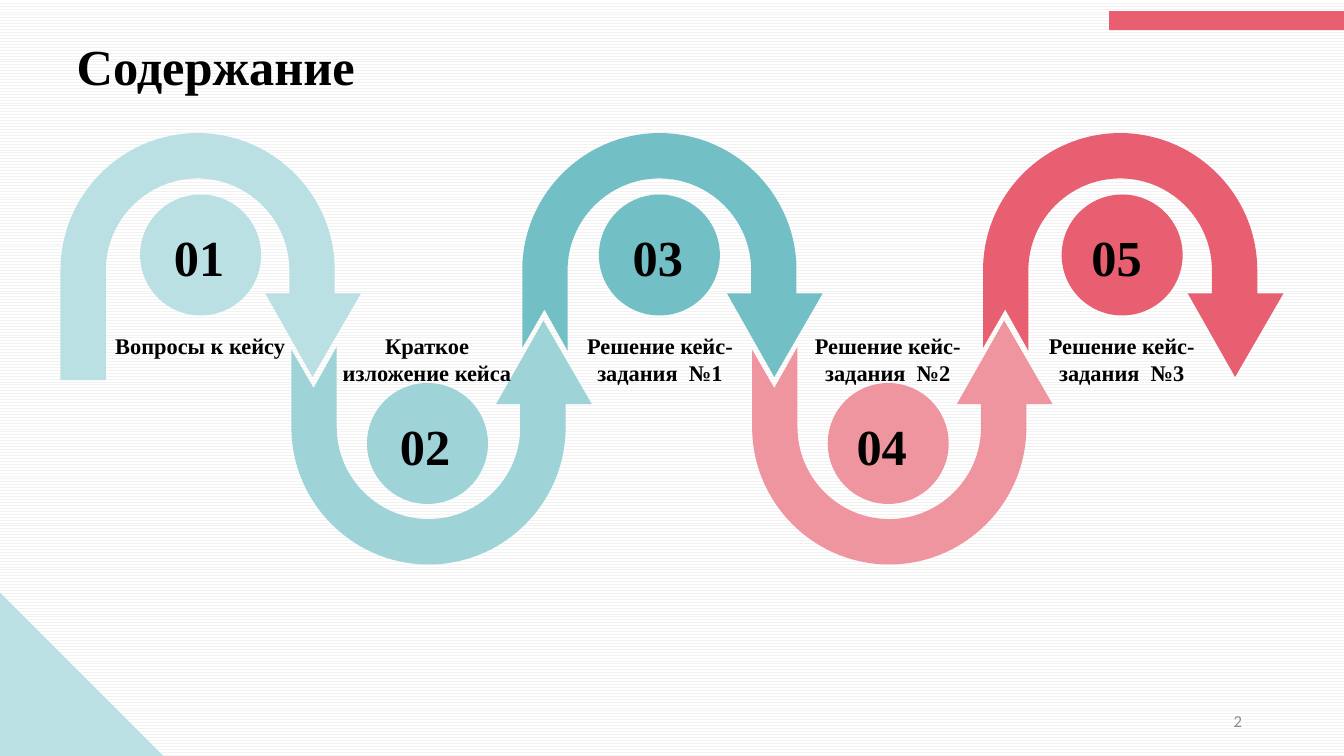
import pptx
import pptx.util
import pptx.dml.color
import pptx.enum.dml
import pptx.enum.shapes
import pptx.enum.text
import pptx.oxml
import pptx.oxml.ns

EMU = 9144  # one px is 0.01 inch
SHAPE = pptx.enum.shapes.MSO_SHAPE
ALIGN = pptx.enum.text.PP_ALIGN
ANCHOR = pptx.enum.text.MSO_ANCHOR
SERIF = "Times New Roman"
HEX = {
    "pale": "BBE0E3", "mint": "9ED3D7", "teal": "72BFC5",
    "pink": "EF95A0", "rose": "E75F71",
    "black": "000000", "gray": "8C8C8C", "line": "F2F2F2", "white": "FFFFFF",
}
COLOR = {name: pptx.dml.color.RGBColor.from_string(code) for name, code in HEX.items()}


def paint(shape, color):
    shape.shadow.inherit = False
    shape.fill.solid()
    shape.fill.fore_color.rgb = COLOR[color]
    shape.line.fill.background()


def write(shape, box, text, size, align=ALIGN.CENTER, font=SERIF, color="black",
          bold=True, anchor=ANCHOR.TOP):
    """Place a text shape in its px box, without margins, and fill in one paragraph."""
    shape.left, shape.top, shape.width, shape.height = [n * EMU for n in box]
    frame = shape.text_frame
    frame.word_wrap = True
    frame.auto_size = pptx.enum.text.MSO_AUTO_SIZE.NONE
    frame.vertical_anchor = anchor
    frame.margin_left = frame.margin_right = frame.margin_top = frame.margin_bottom = 0
    frame.text = text
    par = frame.paragraphs[0]
    par.alignment = align
    par.line_spacing = 1.0
    par.space_before = pptx.util.Pt(0)
    par.font.name = font
    par.font.size = pptx.util.Pt(size)
    par.font.bold = bold
    par.font.color.rgb = COLOR[color]


deck = pptx.Presentation()
deck.slide_width, deck.slide_height = 1333 * EMU, 750 * EMU
slide = deck.slides.add_slide(deck.slide_layouts[5])
shapes = slide.shapes

back = slide.background.fill
back.patterned()
back.pattern = pptx.enum.dml.MSO_PATTERN.ZIG_ZAG
back.fore_color.rgb = COLOR["line"]
back.back_color.rgb = COLOR["white"]

# Corner triangle and top bar
for kind, box, color in [
    (SHAPE.RIGHT_TRIANGLE, (0, 588, 162, 162), "pale"),
    (SHAPE.RECTANGLE, (1100, 11, 233, 19), "rose"),
]:
    paint(shapes.add_shape(kind, *[n * EMU for n in box]), color)

write(shapes.title, (76, 35, 1182, 61), "Содержание", 36, align=ALIGN.LEFT)
write(shapes.add_textbox(0, 0, 0, 0), (942, 695, 290, 40), "2", 12,
      align=ALIGN.RIGHT, font="Calibri", color="gray", bold=False, anchor=ANCHOR.MIDDLE)

# Arrow outline around the centre of its bend; each half ring is two Bezier curves
OUTER, INNER, BEND = 136, 91, 0.55
half = [(-1, -BEND), (-BEND, -1), (0, -1), (BEND, -1), (1, -BEND), (1, 0)]
outer = [(OUTER * x, OUTER * y) for x, y in half]
inner = [(-INNER * x, INNER * y) for x, y in half]
head = [(OUTER, 23), (162, 23), (114, 106), (67, 23), (INNER, 23), (INNER, 0)]
flat = [(-INNER, 109), (-OUTER, 109)]
notch = [(-INNER, 80), (-114, 39), (-OUTER, 77)]
ring = len(outer) + len(head)
curves = [0, 3, ring, ring + 3]

# Colour, label, then the left edges of circle, number and label
stages = [
    ("pale", "Вопросы к кейсу", 139, 70, 114),
    ("mint", "Краткое изложение кейса", 364, 294, 339),
    ("teal", "Решение кейс-задания  №1", 594, 525, 570),
    ("pink", "Решение кейс-задания  №2", 821, 747, 796),
    ("rose", "Решение кейс-задания  №3", 1053, 980, 1028),
]
for i, (color, label, disc_x, num_x, label_x) in enumerate(stages):
    low = i % 2 == 1
    mid_x = 196 + round(i * 228.8)
    mid_y, flip, disc_y, num_y = (424, -1, 380, 412) if low else (268, 1, 193, 224)

    disc = shapes.add_shape(SHAPE.OVAL, disc_x * EMU, disc_y * EMU, 120 * EMU, 120 * EMU)
    paint(disc, color)

    tail = notch if i else flat
    points = [((mid_x + x) * EMU, (mid_y + flip * y) * EMU)
              for x, y in [(-OUTER, 0)] + outer + head + inner + tail]
    pen = shapes.build_freeform(*points[0])
    pen.add_line_segments(points[1:], close=True)
    arrow = pen.convert_to_shape()
    paint(arrow, color)
    lines = list(arrow.element.iter(pptx.oxml.ns.qn("a:lnTo")))
    for start in curves:
        curve = pptx.oxml.parse_xml(f"<a:cubicBezTo {pptx.oxml.ns.nsdecls('a')}/>")
        lines[start].addprevious(curve)
        for line in lines[start:start + 3]:
            curve.append(line[0])
            line.getparent().remove(line)

    write(shapes.add_textbox(0, 0, 0, 0), (label_x, 330, 169, 54), label, 16)
    write(shapes.add_textbox(0, 0, 0, 0), (num_x, num_y, 255, 61), f"{i + 1:02}", 36)

deck.save("out.pptx")
